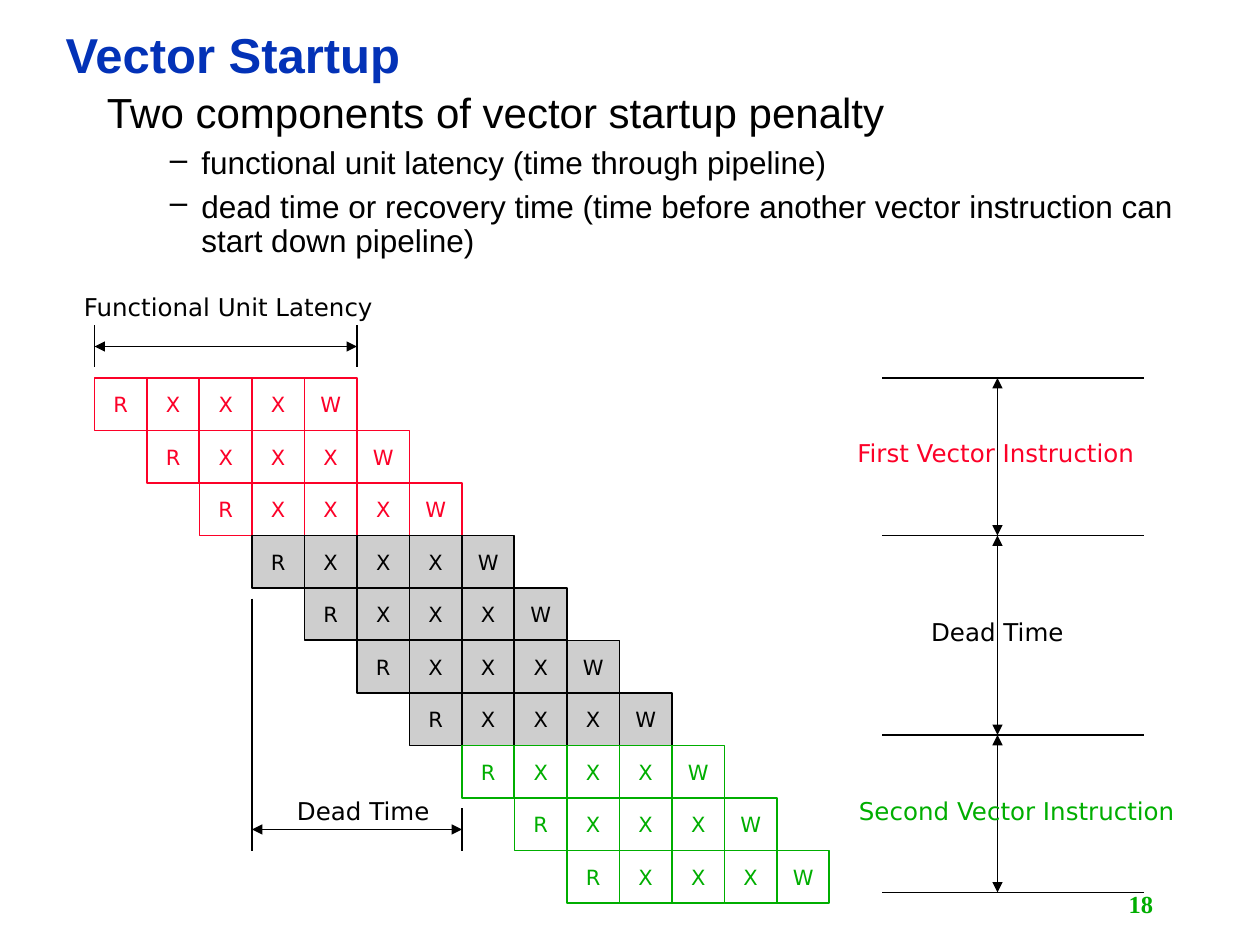
from dataclasses import dataclass

from lxml import etree
from pptx import Presentation
from pptx.dml.color import RGBColor
from pptx.enum.shapes import MSO_CONNECTOR, MSO_SHAPE
from pptx.enum.text import MSO_ANCHOR, MSO_AUTO_SIZE, PP_ALIGN
from pptx.oxml.ns import qn
from pptx.util import Inches, Pt

LEFT, CENTER, RIGHT = PP_ALIGN.LEFT, PP_ALIGN.CENTER, PP_ALIGN.RIGHT
MIDDLE = MSO_ANCHOR.MIDDLE
NO_FIT = MSO_AUTO_SIZE.NONE
RECTANGLE = MSO_SHAPE.RECTANGLE
STRAIGHT = MSO_CONNECTOR.STRAIGHT

COLORS = {
    "title": "0332B7",
    "text": "000000",
    "first": "FC0128",
    "second": "00AE00",
    "idle": "CECECE",
    "paper": "FFFFFF",
}
BODY_FONT = "Arial"
DIAGRAM_FONT = "DejaVu Sans"
NUMBER_FONT = "Times New Roman"

STAGES = "RXXXW"
# Rows of the pipeline: how many, line and text colour, fill
PHASES = [(3, "first", "paper"), (4, "text", "idle"), (3, "second", "paper")]


@dataclass
class Grid:
    """Square cells counted from the top left corner of the pipeline."""
    left: float
    top: float
    cell: float

    def point(self, col, row):
        return Inches(self.left + col * self.cell), Inches(self.top + row * self.cell)

    def size(self, count):
        return Inches(count * self.cell)


def color(name):
    return RGBColor.from_string(COLORS[name])


def write(para, text, font, size, ink="text", bold=False, align=LEFT):
    para.alignment = align
    span = para.add_run()
    span.text = text
    formats = {"name": font, "size": Pt(size), "bold": bold}
    for key, value in formats.items():
        setattr(span.font, key, value)
    span.font.color.rgb = color(ink)


def set_frame(frame, wrap=True, margins=(0.1, 0.05)):
    across, down = (Inches(margin) for margin in margins)
    formats = {
        "word_wrap": wrap, "auto_size": NO_FIT, "vertical_anchor": MIDDLE,
        "margin_left": across, "margin_right": across,
        "margin_top": down, "margin_bottom": down,
    }
    for key, value in formats.items():
        setattr(frame, key, value)


def add_line(page, grid, start, end, arrows=False):
    line = page.shapes.add_connector(STRAIGHT, *grid.point(*start), *grid.point(*end))
    line.line.color.rgb = color("text")
    line.line.width = Pt(1)
    if arrows:
        outline = line.line._get_or_add_ln()
        for tag in ("a:headEnd", "a:tailEnd"):
            etree.SubElement(outline, qn(tag), type="triangle")
    etree.SubElement(line._element.spPr, qn("a:effectLst"))


def add_label(page, grid, center, text, ink="text"):
    cols, rows = 6, 0.8
    corner = grid.point(center[0] - cols / 2, center[1] - rows / 2)
    box = page.shapes.add_textbox(*corner, grid.size(cols), grid.size(rows))
    set_frame(box.text_frame, wrap=False)
    write(box.text_frame.paragraphs[0], text, DIAGRAM_FONT, 14, ink, align=CENTER)


def add_title(page, box):
    title = page.shapes.title
    title.left, title.top, title.width, title.height = map(Inches, box)
    set_frame(title.text_frame)
    para = title.text_frame.paragraphs[0]
    para.line_spacing = 0.9
    write(para, "Vector Startup", BODY_FONT, 28, "title", bold=True)


def add_body(page, box):
    frame = page.shapes.add_textbox(*map(Inches, box)).text_frame
    set_frame(frame)
    lead = frame.paragraphs[0]
    lead.line_spacing = 0.9
    props = lead._p.get_or_add_pPr()
    props.set("marL", str(Inches(0.31)))
    props.set("indent", str(Inches(-0.31)))
    write(lead, "Two components of vector startup penalty", BODY_FONT, 24)
    for text in (
        "functional unit latency (time through pipeline)",
        "dead time or recovery time (time before another vector instruction can "
        "start down pipeline)",
    ):
        para = frame.add_paragraph()
        para.level = 1
        para.line_spacing = 0.9
        para.space_before = Pt(5.4)
        props = para._p.get_or_add_pPr()
        props.set("marL", str(Inches(0.75)))
        props.set("indent", str(Inches(-0.25)))
        etree.SubElement(props, qn("a:buChar"), char="–")
        write(para, text, BODY_FONT, 18)


def add_stage_row(page, grid, row, ink, fill):
    """One pass through the pipeline, shifted right by one cell per row."""
    group = page.shapes.add_group_shape()
    for step, stage in enumerate(STAGES):
        cell = group.shapes.add_shape(
            RECTANGLE, *grid.point(row + step, row), grid.size(1), grid.size(1))
        cell.shadow.inherit = False
        cell.fill.solid()
        cell.fill.fore_color.rgb = color(fill)
        cell.line.color.rgb = color(ink)
        cell.line.width = Pt(1)
        set_frame(cell.text_frame, margins=(0, 0))
        write(cell.text_frame.paragraphs[0], stage, DIAGRAM_FONT, 12, ink, align=CENTER)


def add_pipeline(page, grid):
    row = 0
    for count, ink, fill in PHASES:
        for _ in range(count):
            add_stage_row(page, grid, row, ink, fill)
            row += 1


def add_span(page, grid, cols, tops, bottom, label, center):
    """A horizontal measure between two upright lines, with its label."""
    for col, top in zip(cols, tops):
        add_line(page, grid, (col, top), (col, bottom))
    row = bottom - 0.4
    add_line(page, grid, (cols[0], row), (cols[1], row), arrows=True)
    add_label(page, grid, center, label)


def add_timeline(page, grid):
    first_col, axis, last_col = 15, 17.2, 20
    marks = [0, 3, 6.8, 9.8]
    for row in marks:
        add_line(page, grid, (first_col, row), (last_col, row))
    for top, bottom in zip(marks, marks[1:]):
        add_line(page, grid, (axis, top), (axis, bottom), arrows=True)
    add_label(page, grid, (17.17, 1.43), "First Vector Instruction", "first")
    add_label(page, grid, (axis, 4.84), "Dead Time")
    add_label(page, grid, (17.57, 8.25), "Second Vector Instruction", "second")


def add_page_number(page, box):
    frame = page.shapes.add_textbox(*map(Inches, box)).text_frame
    set_frame(frame)
    write(frame.paragraphs[0], "18", NUMBER_FONT, 14, "second", bold=True, align=RIGHT)


def main():
    deck = Presentation()
    deck.slide_width, deck.slide_height = Inches(10), Inches(7.5)
    page = deck.slides.add_slide(deck.slide_layouts[5])
    grid = Grid(left=0.75, top=3, cell=5 / 12)
    add_page_number(page, (7.17, 7.01, 2.08, 0.32))
    add_title(page, (0.42, 0.08, 7.83, 0.75))
    add_body(page, (0.75, 0.67, 8.67, 1.45))
    add_pipeline(page, grid)
    add_span(page, grid, (0, 5), (-1, -1), -0.2, "Functional Unit Latency", (2.55, -1.35))
    add_span(page, grid, (3, 7), (4.2, 8.2), 9, "Dead Time", (5.12, 8.25))
    add_timeline(page, grid)
    deck.save("out.pptx")


if __name__ == "__main__":
    main()
